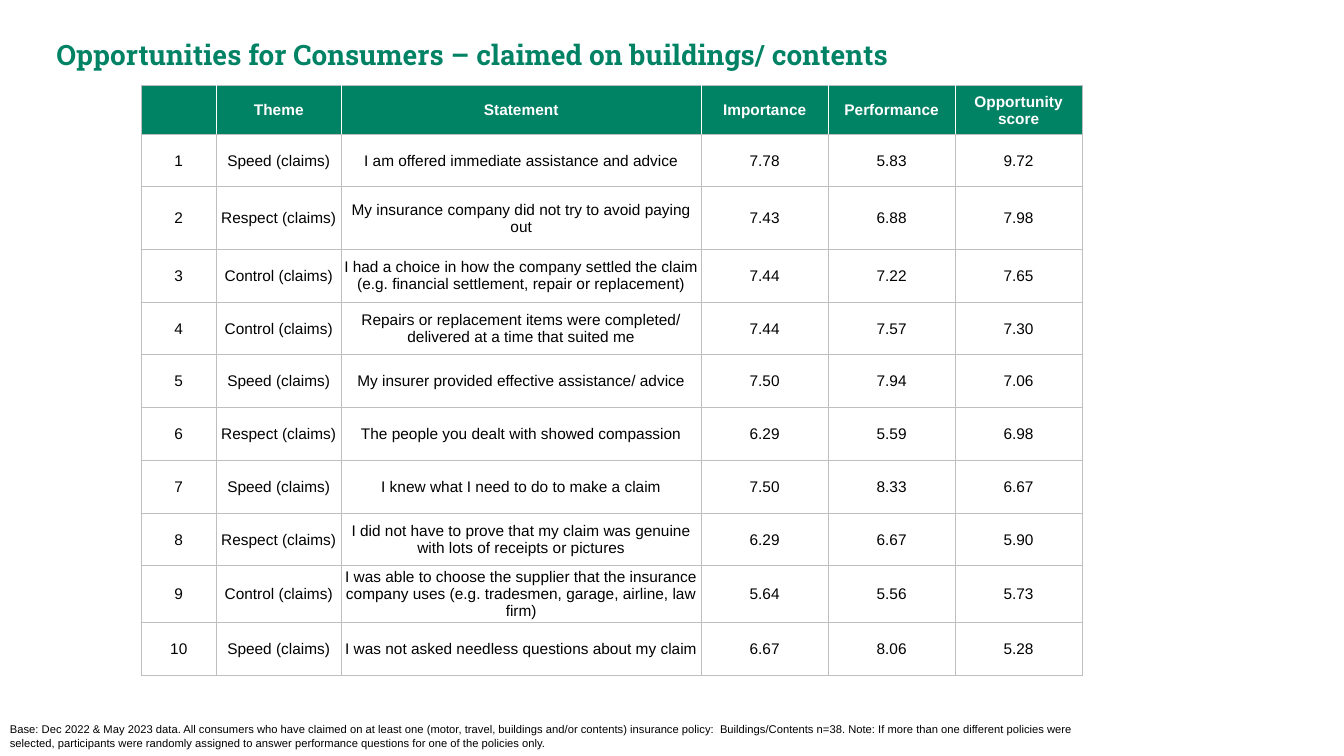
from lxml import etree
from pptx import Presentation
from pptx.dml.color import RGBColor
from pptx.enum import text
from pptx.oxml import ns
from pptx.util import Cm, Pt

GREEN = RGBColor(0x00, 0x82, 0x65)
WHITE = RGBColor(0xFF, 0xFF, 0xFF)
BLACK = RGBColor(0x00, 0x00, 0x00)
GREY = RGBColor(0xBF, 0xBF, 0xBF)

TITLE = "Opportunities for Consumers – claimed on buildings/ contents"
BASE_NOTE = (
    "Base: Dec 2022 & May 2023 data. All consumers who have claimed on at least one "
    "(motor, travel, buildings and/or contents) insurance policy:  Buildings/Contents n=38. "
    "Note: If more than one different policies were selected, participants were randomly "
    "assigned to answer performance questions for one of the policies only."
)
HEADINGS = ("", "Theme", "Statement", "Importance", "Performance", "Opportunity score")
OPPORTUNITIES = [
    ("Speed", "I am offered immediate assistance and advice", 7.78, 5.83, 9.72),
    ("Respect", "My insurance company did not try to avoid paying out", 7.43, 6.88, 7.98),
    ("Control", "I had a choice in how the company settled the claim "
     "(e.g. financial settlement, repair or replacement)", 7.44, 7.22, 7.65),
    ("Control", "Repairs or replacement items were completed/ "
     "delivered at a time that suited me", 7.44, 7.57, 7.30),
    ("Speed", "My insurer provided effective assistance/ advice", 7.50, 7.94, 7.06),
    ("Respect", "The people you dealt with showed compassion", 6.29, 5.59, 6.98),
    ("Speed", "I knew what I need to do to make a claim", 7.50, 8.33, 6.67),
    ("Respect", "I did not have to prove that my claim was genuine "
     "with lots of receipts or pictures", 6.29, 6.67, 5.90),
    ("Control", "I was able to choose the supplier that the insurance company uses "
     "(e.g. tradesmen, garage, airline, law firm)", 5.64, 5.56, 5.73),
    ("Speed", "I was not asked needless questions about my claim", 6.67, 8.06, 5.28),
]
COLUMN_WIDTHS = (1.89, 3.15, 9.07, 3.2, 3.2, 3.2)
HEADER_HEIGHT = 1.22
ROW_HEIGHT = 1.33
TALL_ROW_HEIGHT = 1.57
TALL_ROW = 2


def style_font(paragraph, name, size, color, bold=False):
    font = paragraph.font
    font.name = name
    font.size = Pt(size)
    font.bold = bold
    font.color.rgb = color


def add_text(slide, left, top, width, height, content, name, size, color, bold=False):
    frame = slide.shapes.add_textbox(Cm(left), Cm(top), Cm(width), Cm(height)).text_frame
    frame.word_wrap = True
    frame.text = content
    style_font(frame.paragraphs[0], name, size, color, bold)


def add_border(cell, side, color, width):
    properties = cell._tc.get_or_add_tcPr()
    line = etree.SubElement(properties, ns.qn(f"a:ln{side}"), w=str(Pt(width)))
    fill = etree.SubElement(line, ns.qn("a:solidFill"))
    etree.SubElement(fill, ns.qn("a:srgbClr"), val=str(color))


def fill_cell(cell, content, is_header, white_sides):
    for side in "LRTB":
        color, width = (WHITE, 1) if side in white_sides else (GREY, 0.75)
        add_border(cell, side, color, width)
    if is_header:
        cell.fill.solid()
        cell.fill.fore_color.rgb = GREEN
    else:
        cell.fill.background()
    cell.margin_left = cell.margin_right = cell.margin_top = Cm(0.02)
    cell.margin_bottom = 0
    cell.vertical_anchor = text.MSO_ANCHOR.MIDDLE
    cell.text = content
    paragraph = cell.text_frame.paragraphs[0]
    paragraph.alignment = text.PP_ALIGN.CENTER
    style_font(paragraph, "Arial", 11, WHITE if is_header else BLACK, is_header)


def add_opportunity_table(slide, left, top):
    rows = [HEADINGS]
    for rank, (theme, statement, *scores) in enumerate(OPPORTUNITIES, 1):
        rows.append((str(rank), f"{theme} (claims)", statement, *(f"{score:.2f}" for score in scores)))
    heights = [HEADER_HEIGHT] + [ROW_HEIGHT] * len(OPPORTUNITIES)
    heights[TALL_ROW] = TALL_ROW_HEIGHT

    table = slide.shapes.add_table(
        len(rows), len(HEADINGS), Cm(left), Cm(top), Cm(sum(COLUMN_WIDTHS)), Cm(sum(heights))
    ).table
    table.first_row = True
    table.horz_banding = False
    for column, width in zip(table.columns, COLUMN_WIDTHS):
        column.width = Cm(width)
    last_column = len(HEADINGS) - 1
    for row_index, (row, height) in enumerate(zip(rows, heights)):
        table.rows[row_index].height = Cm(height)
        is_header = row_index == 0
        for column_index, content in enumerate(row):
            white_sides = ""
            if is_header:
                white_sides += "L" if column_index > 0 else ""
                white_sides += "R" if column_index < last_column else ""
            fill_cell(table.cell(row_index, column_index), content, is_header, white_sides)


def main():
    presentation = Presentation()
    presentation.slide_width = Cm(33.87)
    presentation.slide_height = Cm(19.05)
    slide = presentation.slides.add_slide(presentation.slide_layouts[6])
    add_text(slide, 1.17, 0.81, 31.19, 1.12, TITLE, "Roboto Slab", 20, GREEN, bold=True)
    add_opportunity_table(slide, 3.56, 2.16)
    add_text(slide, 0, 18.08, 27.66, 0.97, BASE_NOTE, "Arial", 8, BLACK)
    presentation.save("out.pptx")


if __name__ == "__main__":
    main()
